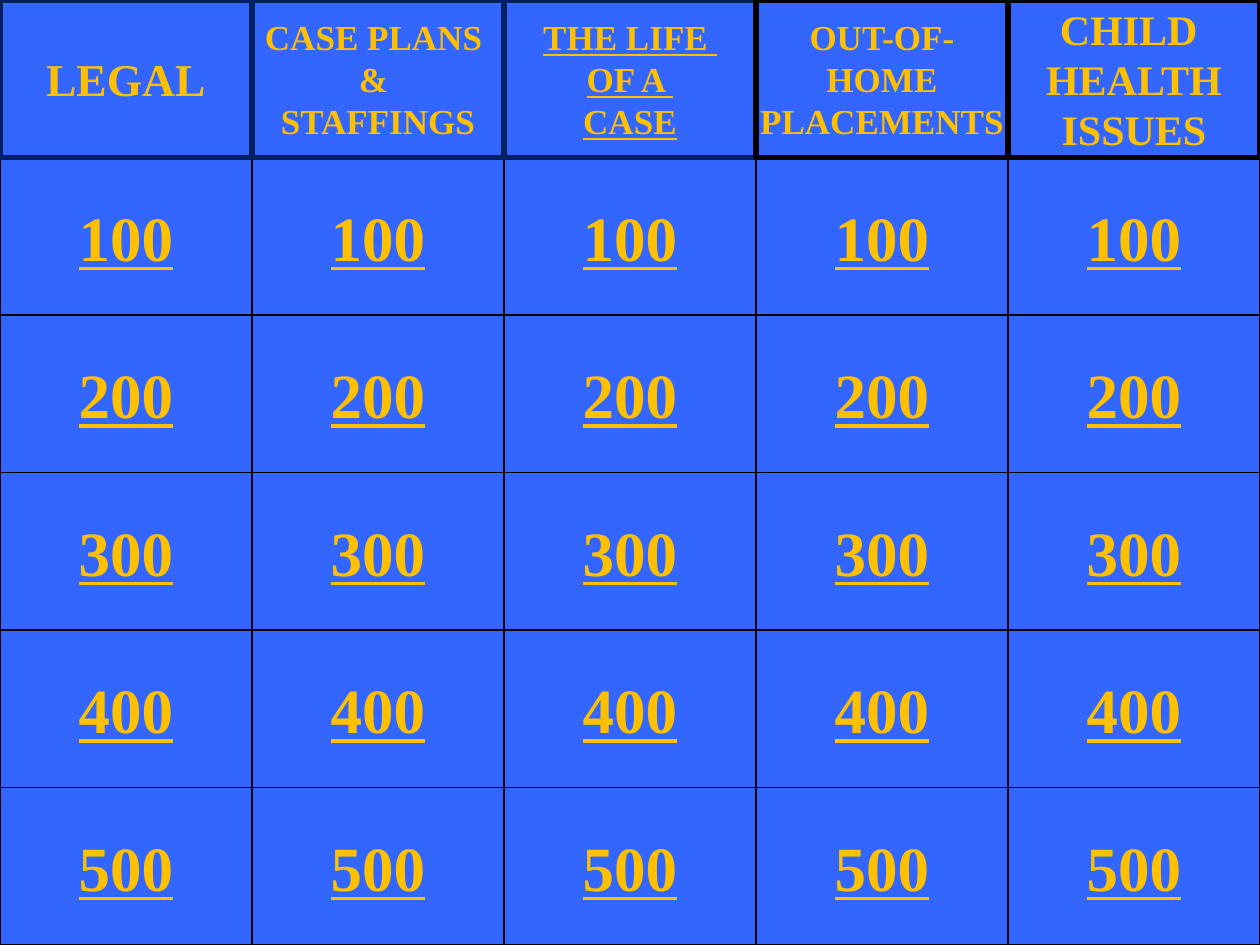
from pptx import Presentation
from pptx.dml.color import RGBColor
from pptx.enum.shapes import MSO_SHAPE
from pptx.enum.text import MSO_ANCHOR, PP_ALIGN
from pptx.util import Inches, Pt

BUTTON, HEADER = MSO_SHAPE.ACTION_BUTTON_CUSTOM, MSO_SHAPE.RECTANGLE
MIDDLE, CENTER = MSO_ANCHOR.MIDDLE, PP_ALIGN.CENTER

COLORS = {"board": "3366FF", "gold": "FFC000", "navy": "002060", "black": "000000"}
FONT = "Times New Roman"

# Heading, text size, underlined, border colour
CATEGORIES = [
    ("LEGAL", 26, False, "navy"),
    ("CASE PLANS \n& \nSTAFFINGS", 20, False, "navy"),
    ("THE LIFE \nOF A \nCASE", 20, True, "navy"),
    ("OUT-OF-\nHOME\nPLACEMENTS", 20, False, "black"),
    ("CHILD \nHEALTH\nISSUES", 24, False, "black"),
]
POINTS = [100, 200, 300, 400, 500]


def color(name):
    return RGBColor.from_string(COLORS[name])


def add_tile(slide, kind, box, text, size, underline, border, border_width):
    """One board cell with centred gold text."""
    tile = slide.shapes.add_shape(kind, *box)
    tile.shadow.inherit = False
    tile.fill.solid()
    tile.fill.fore_color.rgb = color("board")
    tile.line.color.rgb = color(border)
    tile.line.width = Pt(border_width)

    frame = tile.text_frame
    frame.word_wrap = False
    frame.vertical_anchor = MIDDLE
    frame.text = text
    for paragraph in frame.paragraphs:
        paragraph.alignment = CENTER
        for run in paragraph.runs:
            run.font.name = FONT
            run.font.size = Pt(size)
            run.font.bold = True
            run.font.underline = underline
            run.font.color.rgb = color("gold")


def add_points(slide, box):
    """Grid of point buttons, one column per category."""
    left, top, width, height = box
    column, row = width // len(CATEGORIES), height // len(POINTS)
    for i in range(len(CATEGORIES)):
        for j, points in enumerate(POINTS):
            cell = (left + i * column, top + j * row, column, row)
            add_tile(slide, BUTTON, cell, str(points), 36, True, "black", 0.75)


def add_headers(slide, box):
    """Row of category headings."""
    left, top, width, height = box
    column = width // len(CATEGORIES)
    for i, (heading, size, underline, border) in enumerate(CATEGORIES):
        cell = (left + i * column, top, column, height)
        add_tile(slide, HEADER, cell, heading, size, underline, border, 3)


def main():
    deck = Presentation()
    deck.slide_width, deck.slide_height = Inches(10), Inches(7.5)
    slide = deck.slides.add_slide(deck.slide_layouts[6])
    slide.background.fill.solid()
    slide.background.fill.fore_color.rgb = color("board")

    # Headings take one row; their thick borders lie over the buttons
    width, height = deck.slide_width, deck.slide_height
    row = height // (len(POINTS) + 1)
    add_points(slide, (0, row, width, height - row))
    add_headers(slide, (0, 0, width, row))
    deck.save("out.pptx")


if __name__ == "__main__":
    main()
